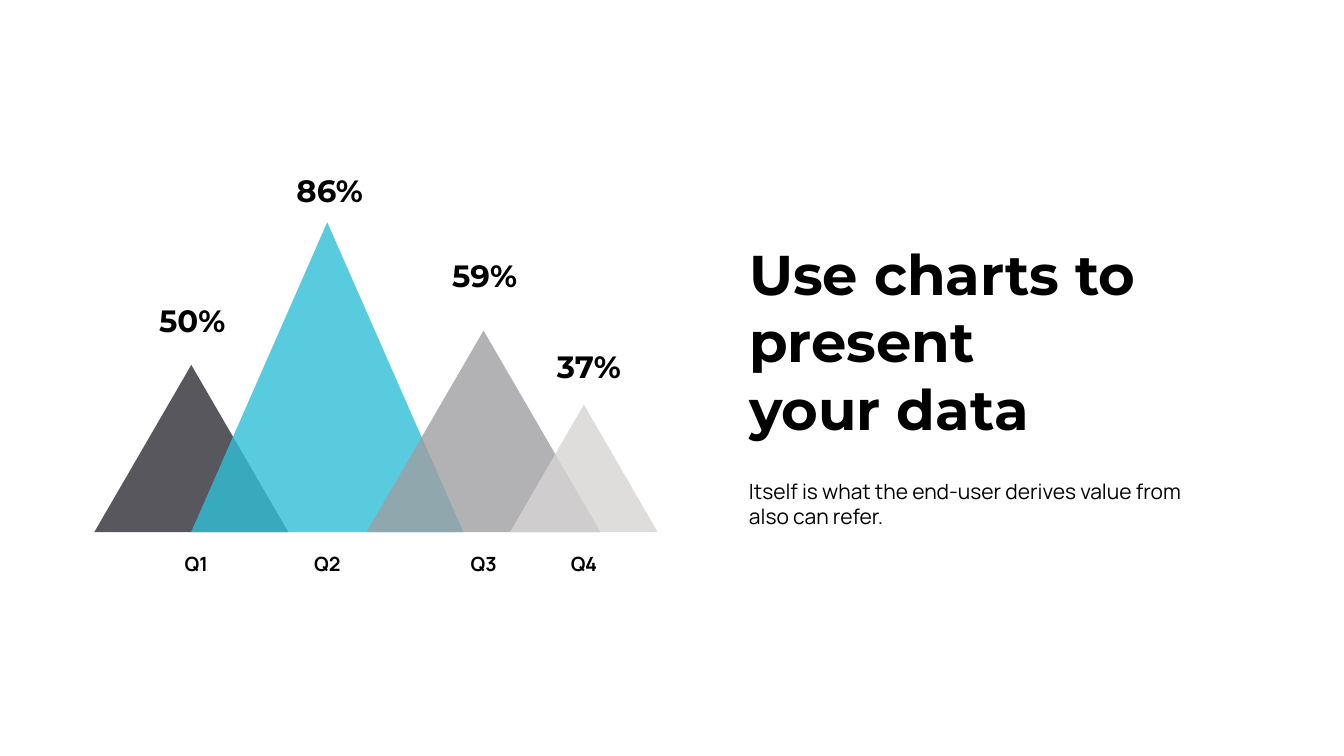
from lxml import etree
from pptx import Presentation
from pptx.dml.color import RGBColor
from pptx.enum import shapes, text
from pptx.oxml import ns
from pptx.util import Cm, Pt

COLORS = {"text": "000000", "Q1": "2E2E35", "Q2": "2FC0D6", "Q3": "9F9EA2", "Q4": "D7D5D4"}
TITLE = {"name": "Montserrat", "size": Pt(80), "bold": True}
BODY = {"name": "Manrope", "size": Pt(30), "bold": False}
VALUE = {"name": "Montserrat", "size": Pt(44), "bold": True}
QUARTER = {"name": "Manrope", "size": Pt(28), "bold": True}
LEFT, CENTER, RIGHT = text.PP_ALIGN.LEFT, text.PP_ALIGN.CENTER, text.PP_ALIGN.RIGHT


def write(sp, lines, font, align=LEFT, wrap=True):
    """Fill a shape with one formatted paragraph per line."""
    tf = sp.text_frame
    tf.word_wrap = wrap
    tf.auto_size = text.MSO_AUTO_SIZE.SHAPE_TO_FIT_TEXT
    tf.vertical_anchor = text.MSO_ANCHOR.TOP
    for i, line in enumerate(lines):
        p = tf.paragraphs[0] if i == 0 else tf.add_paragraph()
        p.alignment = align
        r = p.add_run()
        r.text = line
        for key, val in font.items():
            setattr(r.font, key, val)
        r.font.color.rgb = RGBColor.from_string(COLORS["text"])


prs = Presentation()
prs.slide_width, prs.slide_height = Cm(67.72), Cm(38.1)
s = prs.slides.add_slide(prs.slide_layouts[5])

title = s.shapes.title
title.left, title.top, title.width, title.height = Cm(37.49), Cm(11.95), Cm(26.31), Cm(10.52)
write(title, ["Use charts to", "present", "your data"], TITLE)

body = s.shapes.add_textbox(Cm(37.49), Cm(24), Cm(23.93), Cm(2.82))
write(body, ["Itself is what the end-user derives value from also can refer."], BODY)

# Peaks stand on one baseline: quarter, left, width, height
baseline = 26.82
peaks = [
    ("Q1", 4.75, 9.78, 8.43),
    ("Q2", 9.63, 13.72, 15.62),
    ("Q3", 18.47, 11.79, 10.16),
    ("Q4", 25.7, 7.44, 6.43),
]
for quarter, left, width, height in peaks:
    sp = s.shapes.add_shape(shapes.MSO_SHAPE.ISOSCELES_TRIANGLE,
                            Cm(left), Cm(baseline - height), Cm(width), Cm(height))
    sp.shadow.inherit = False
    sp.line.fill.background()
    sp.fill.solid()
    sp.fill.fore_color.rgb = RGBColor.from_string(COLORS[quarter])
    clr = sp.element.spPr.find(".//" + ns.qn("a:srgbClr"))
    etree.SubElement(clr, ns.qn("a:alpha"), val="80000")

# Labels: text, centre, top, width, height, font, alignment
labels = [
    ("Q1", 9.89, 27.71, 1.85, 1.45, QUARTER, CENTER),
    ("Q2", 16.49, 27.71, 1.85, 1.45, QUARTER, CENTER),
    ("Q3", 24.37, 27.71, 1.85, 1.45, QUARTER, CENTER),
    ("Q4", 29.42, 27.71, 1.85, 1.45, QUARTER, CENTER),
    ("50%", 9.69, 15.09, 4.14, 2.13, VALUE, CENTER),
    ("86%", 16.61, 8.53, 4.11, 2.13, VALUE, CENTER),
    ("59%", 24.42, 12.8, 4.04, 2.13, VALUE, CENTER),
    ("37%", 29.59, 17.4, 3.91, 2.13, VALUE, RIGHT),
]
for label, center, top, width, height, font, align in labels:
    sp = s.shapes.add_textbox(Cm(center - width / 2), Cm(top), Cm(width), Cm(height))
    write(sp, [label], font, align, wrap=False)

prs.save("out.pptx")
